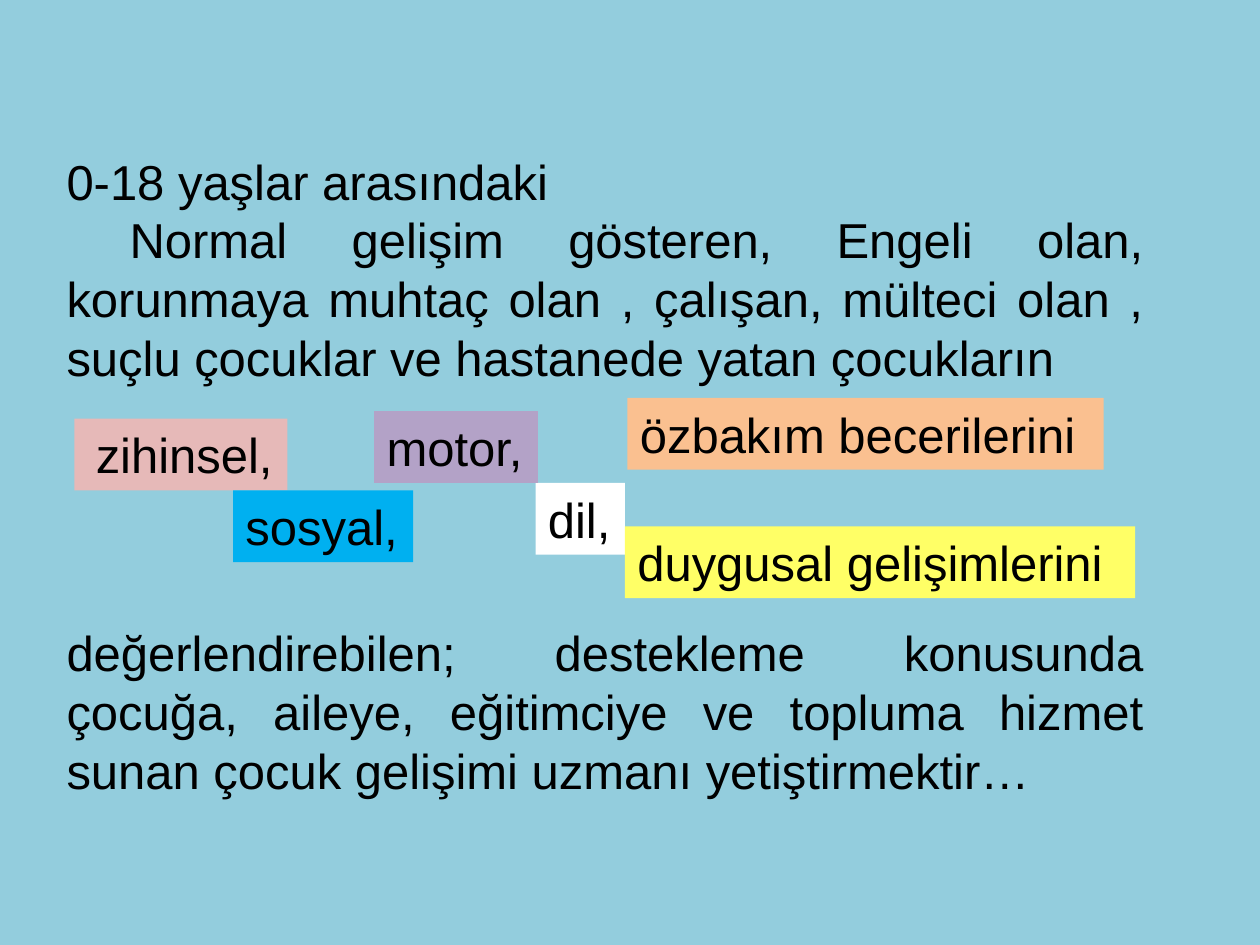
from dataclasses import dataclass

from pptx import Presentation
from pptx.dml.color import RGBColor
from pptx.enum.text import MSO_ANCHOR, PP_ALIGN
from pptx.util import Inches, Pt

JUSTIFY = PP_ALIGN.JUSTIFY
LEFT = PP_ALIGN.LEFT
TOP = MSO_ANCHOR.TOP

COLORS = {
    "sky": "93CDDD",
    "ink": "000000",
    "rose": "E6B9B8",
    "white": "FFFFFF",
    "violet": "B3A2C7",
    "blue": "00B0F0",
    "yellow": "FFFF66",
    "orange": "FAC090",
}
FONT = "Arial"
TEXT_SIZE = 28
SLIDE_WIDTH, SLIDE_HEIGHT = 10, 7.5
LINE_HEIGHT = 0.47
CHIP_HEIGHT = 0.57
INSET = 0.05


@dataclass(frozen=True)
class Skill:
    label: str
    color: str
    left: float
    top: float
    width: float
    indent: float = 0
    wraps: bool = True


@dataclass(frozen=True)
class Passage:
    text: str
    align: PP_ALIGN = JUSTIFY
    lines_before: int = 0


SKILLS = [
    Skill("zihinsel,", "rose", 0.059, 0.443, 0.169, indent=0.07),
    Skill("dil,", "white", 0.425, 0.511, 0.071),
    Skill("motor,", "violet", 0.297, 0.435, 0.13, wraps=False),
    Skill("sosyal,", "blue", 0.185, 0.519, 0.143, wraps=False),
    Skill("duygusal gelişimlerini", "yellow", 0.496, 0.557, 0.405),
    Skill("özbakım becerilerini", "orange", 0.498, 0.421, 0.378),
]

PASSAGES = [
    Passage("0-18 yaşlar arasındaki", LEFT),
    Passage(
        "\tNormal gelişim gösteren, Engeli olan, korunmaya muhtaç olan , "
        "çalışan, mülteci olan , suçlu çocuklar ve hastanede yatan çocukların"
    ),
    Passage(
        "değerlendirebilen; destekleme konusunda çocuğa, aileye, eğitimciye "
        "ve topluma hizmet sunan çocuk gelişimi uzmanı yetiştirmektir…",
        lines_before=4,
    ),
]


def rgb(name: str) -> RGBColor:
    return RGBColor.from_string(COLORS[name])


def style(paragraph, align: PP_ALIGN = LEFT) -> None:
    paragraph.alignment = align
    for run in paragraph.runs:
        run.font.name = FONT
        run.font.size = Pt(TEXT_SIZE)
        run.font.color.rgb = rgb("ink")


def add_box(slide, left: float, top: float, width: float, height: float):
    return slide.shapes.add_textbox(
        Inches(left * SLIDE_WIDTH),
        Inches(top * SLIDE_HEIGHT),
        Inches(width * SLIDE_WIDTH),
        Inches(height * SLIDE_HEIGHT),
    )


def add_skill(slide, skill: Skill) -> None:
    chip = add_box(slide, skill.left, skill.top, skill.width, CHIP_HEIGHT / SLIDE_HEIGHT)
    chip.fill.solid()
    chip.fill.fore_color.rgb = rgb(skill.color)
    frame = chip.text_frame
    frame.word_wrap = skill.wraps
    frame.vertical_anchor = TOP
    frame.margin_left = Inches(0.1 + skill.indent)
    frame.text = skill.label
    style(frame.paragraphs[0])


def add_passages(slide, passages: list[Passage]) -> None:
    frame = add_box(slide, 0.043, 0.028, 0.874, 0.83).text_frame
    frame.word_wrap = True
    frame.vertical_anchor = TOP
    frame.margin_top = Inches(INSET + 2 * LINE_HEIGHT)
    for index, passage in enumerate(passages):
        paragraph = frame.paragraphs[0] if index == 0 else frame.add_paragraph()
        paragraph.text = passage.text
        paragraph.space_before = Pt(round(passage.lines_before * LINE_HEIGHT * 72))
        style(paragraph, passage.align)


def main() -> None:
    deck = Presentation()
    deck.slide_width = Inches(SLIDE_WIDTH)
    deck.slide_height = Inches(SLIDE_HEIGHT)
    slide = deck.slides.add_slide(deck.slide_layouts[6])
    slide.background.fill.solid()
    slide.background.fill.fore_color.rgb = rgb("sky")
    add_passages(slide, PASSAGES)
    for skill in SKILLS:
        add_skill(slide, skill)
    deck.save("out.pptx")


if __name__ == "__main__":
    main()
